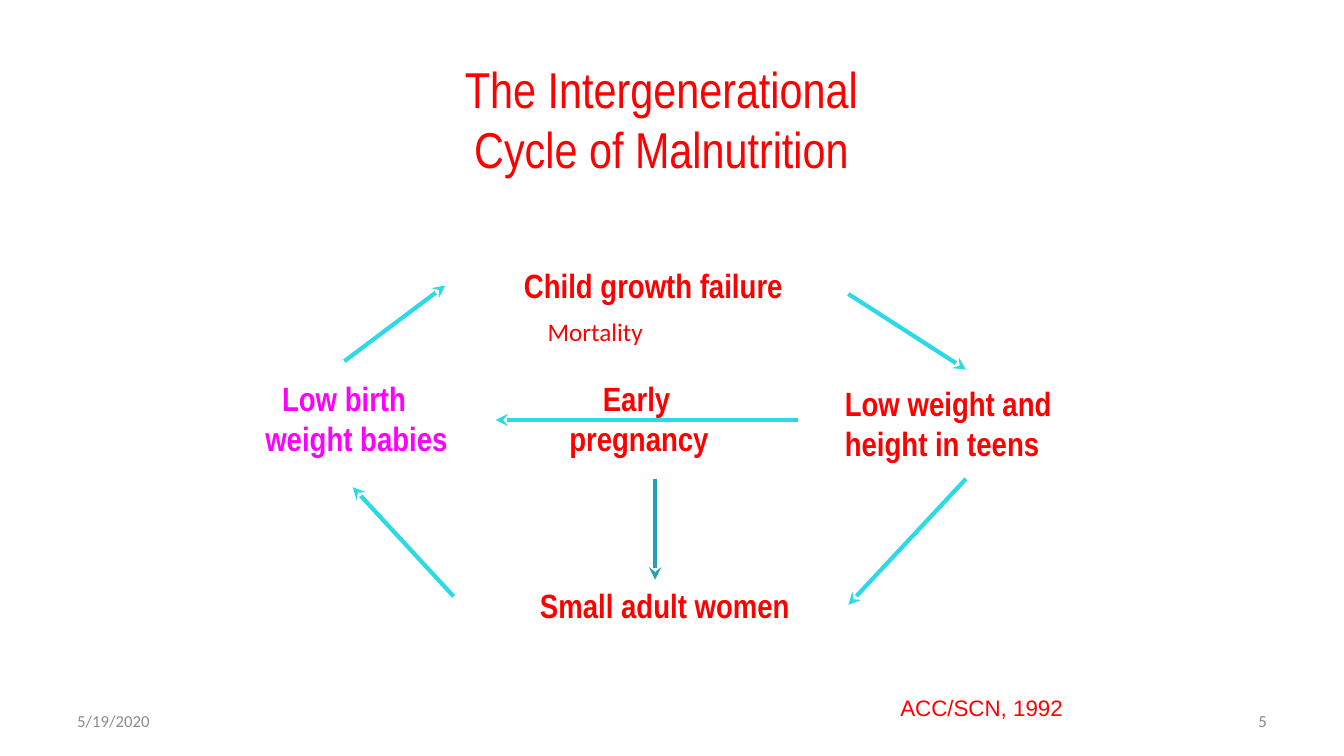
"""Build the slide on the intergenerational cycle of malnutrition."""
from pptx import Presentation, util as u
from pptx.dml.color import RGBColor
from pptx.enum import shapes, text
from pptx.oxml.ns import qn
from lxml import etree

COLS, ROWS = 160, 90
COLORS = {"red": "FF0000", "magenta": "FF00FF", "cyan": "2CD9E6",
          "teal": "239FB8", "date": "8C8C8C", "number": "898989"}
STAGE = {"font": "Arial Narrow", "size": 24, "bold": True}
FOOTER = {"font": "Calibri", "size": 12, "color": "date", "middle": True}

TEXTS = [
    ("The Intergenerational\vCycle of Malnutrition", (34.1, 6.2, 89.3, 15.8),
     {"font": "Arial Narrow", "size": 36, "align": "CENTER", "middle": True}),
    ("Child growth failure", (61.2, 31, 36, 6.1), STAGE),
    ("Early\npregnancy", (66.6, 44.4, 22, 11), {**STAGE, "indent": 4}),
    ("Small adult women", (63.1, 69, 36, 6.1), STAGE),
    ("Low birth\nweight babies", (30.4, 44.4, 28, 11),
     {**STAGE, "color": "magenta", "indent": 2}),
    ("Low weight and\nheight in teens", (99.4, 45, 36, 11), STAGE),
    ("Mortality", (64, 37.1, 23, 4.8), {"font": "Calibri", "size": 18}),
    ("ACC/SCN, 1992", (106, 82, 28, 4.4), {"font": "Arial", "size": 16}),
    ("5/19/2020", (8, 83.4, 37.3, 4.8), FOOTER),
    ("5", (114.7, 83.4, 37.3, 4.8),
     {**FOOTER, "color": "number", "align": "RIGHT"}),
]
ARROWS = [
    ((95, 50), (59, 50), "cyan"),
    ((101, 35), (115, 44), "cyan"),
    ((41, 43), (53, 34), "cyan"),
    ((54, 71), (42, 58), "cyan"),
    ((115, 57), (101, 72), "cyan"),
    ((78, 57), (78, 69), "teal"),
]

prs = Presentation()
prs.slide_width, prs.slide_height = u.Inches(13.33), u.Inches(7.5)
s = prs.slides.add_slide(prs.slide_layouts[6])


def grid(*values):
    """Turn alternating column and row counts into slide lengths."""
    units = prs.slide_width / COLS, prs.slide_height / ROWS
    return [round(v * units[i % 2]) for i, v in enumerate(values)]


def add_text(words, box, font, size, color="red", bold=False,
             align="LEFT", middle=False, indent=0):
    """Add a text box; indent moves its first line, in columns."""
    tf = s.shapes.add_textbox(*grid(*box)).text_frame
    tf.word_wrap = True
    tf.vertical_anchor = text.MSO_ANCHOR.MIDDLE if middle else text.MSO_ANCHOR.TOP
    tf.text = words
    for p in tf.paragraphs:
        p.alignment = getattr(text.PP_ALIGN, align)
        for r in p.runs:
            r.font.name, r.font.size, r.font.bold = font, u.Pt(size), bold
            r.font.color.rgb = RGBColor.from_string(COLORS[color])
    if indent:
        tf.paragraphs[0]._p.get_or_add_pPr().set("marL", str(grid(indent)[0]))


def add_arrow(start, end, color):
    """Add a straight arrow between two grid points."""
    c = s.shapes.add_connector(shapes.MSO_CONNECTOR.STRAIGHT, *grid(*start, *end))
    c.line.width = u.Pt(3)
    c.line.color.rgb = RGBColor.from_string(COLORS[color])
    etree.SubElement(c.line._get_or_add_ln(), qn("a:tailEnd"), type="stealth")
    etree.SubElement(c._element.spPr, qn("a:effectLst"))


for words, box, style in TEXTS:
    add_text(words, box, **style)
for arrow in ARROWS:
    add_arrow(*arrow)

prs.save("out.pptx")
